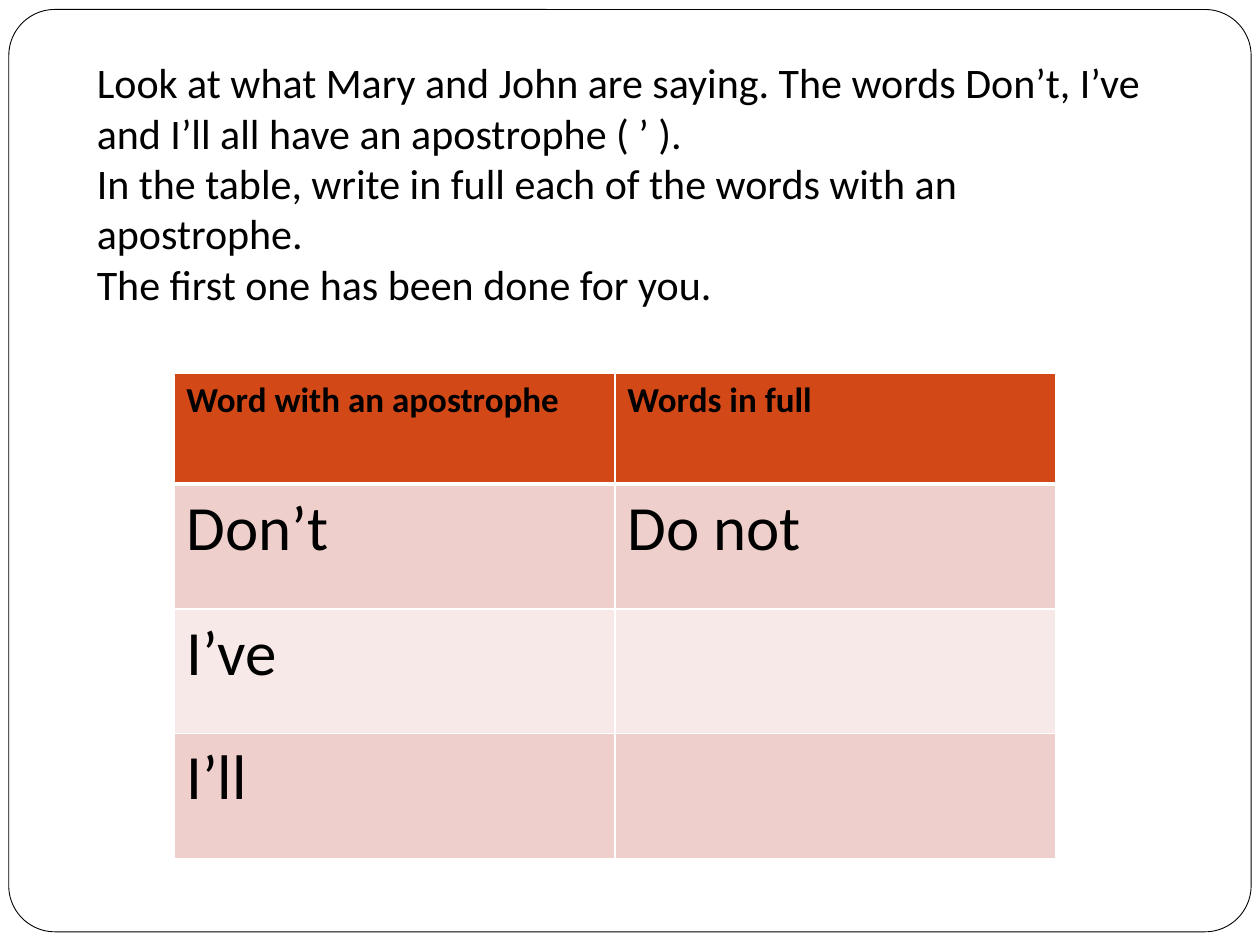
from dataclasses import dataclass
from typing import NamedTuple

from lxml.etree import SubElement
from pptx import Presentation
from pptx.dml.color import RGBColor
from pptx.enum.shapes import MSO_SHAPE as Shape
from pptx.enum.text import MSO_ANCHOR as Anchor
from pptx.oxml.ns import qn
from pptx.util import Inches, Pt


@dataclass(frozen=True)
class Theme:
    font: str = "Calibri"
    ink: str = "000000"
    paper: str = "FFFFFF"
    header: str = "D34817"
    bands: tuple[str, str] = ("EFCFCC", "F7E9E8")
    instruction_size: int = 24
    header_size: int = 20
    word_size: int = 36
    rule: int = 1
    header_rule: int = 3


class Box(NamedTuple):
    """Place and size as shares of the slide."""
    left: float
    top: float
    width: float
    height: float

    def lengths(self) -> tuple[int, ...]:
        return tuple(int(share * side) for share, side in zip(self, (WIDTH, HEIGHT) * 2))


class Row(NamedTuple):
    words: tuple[str, str]
    height: float
    fill: str
    size: int
    bold: bool = False
    top_rule: int = 1
    bottom_rule: int = 1


THEME = Theme()
WIDTH, HEIGHT = Inches(10), Inches(7.5)
FRAME = Box(0.007, 0.01, 0.986, 0.976)
INSTRUCTIONS = Box(0.067, 0.048, 0.85, 0.292)
TABLE = Box(0.138, 0.395, 0.70, 0.513)
HEADER_HEIGHT, WORD_HEIGHT = 0.88, 0.99

INSTRUCTION_LINES = (
    "Look at what Mary and John are saying. The words Don’t, I’ve and I’ll all have an apostrophe ( ’ ).",
    "In the table, write in full each of the words with an apostrophe.",
    "The first one has been done for you.",
)
HEADINGS = ("Word with an apostrophe", "Words in full")
CONTRACTIONS = (("Don’t", "Do not"), ("I’ve", ""), ("I’ll", ""))


def color(value: str) -> RGBColor:
    return RGBColor.from_string(value)


def add_run(paragraph, text: str, size: int, bold: bool = False) -> None:
    run = paragraph.add_run()
    run.text = text
    run.font.name = THEME.font
    run.font.size = Pt(size)
    run.font.bold = bold
    run.font.color.rgb = color(THEME.ink)


def draw_frame(slide) -> None:
    frame = slide.shapes.add_shape(Shape.ROUNDED_RECTANGLE, *FRAME.lengths())
    frame.adjustments[0] = 0.05
    frame.shadow.inherit = False
    frame.fill.solid()
    frame.fill.fore_color.rgb = color(THEME.paper)
    frame.line.color.rgb = color(THEME.ink)
    frame.line.width = Pt(0.5)


def draw_instructions(slide) -> None:
    body = slide.shapes.add_textbox(*INSTRUCTIONS.lengths()).text_frame
    body.word_wrap = True
    body.vertical_anchor = Anchor.BOTTOM
    body.margin_bottom = Inches(0.1)
    paragraph = body.paragraphs[0]
    for index, line in enumerate(INSTRUCTION_LINES):
        if index:
            paragraph.add_line_break()
        add_run(paragraph, line, THEME.instruction_size)


def draw_borders(cell, row: Row) -> None:
    properties = cell._tc.get_or_add_tcPr()
    widths = {"lnL": THEME.rule, "lnR": THEME.rule, "lnT": row.top_rule, "lnB": row.bottom_rule}
    for position, (side, width) in enumerate(widths.items()):
        border = SubElement(properties, qn(f"a:{side}"), w=str(Pt(width)))
        SubElement(SubElement(border, qn("a:solidFill")), qn("a:srgbClr"), val=THEME.paper)
        properties.insert(position, border)


def draw_table(slide, rows: list[Row]) -> None:
    columns = len(HEADINGS)
    table = slide.shapes.add_table(len(rows), columns, *TABLE.lengths()).table
    for line, row in zip(table.rows, rows):
        line.height = Inches(row.height)
        for cell, words in zip(line.cells, row.words):
            cell.fill.solid()
            cell.fill.fore_color.rgb = color(row.fill)
            draw_borders(cell, row)
            paragraph = cell.text_frame.paragraphs[0]
            paragraph.font.size = Pt(row.size)
            if words:
                add_run(paragraph, words, row.size, row.bold)


def main() -> None:
    deck = Presentation()
    deck.slide_width, deck.slide_height = WIDTH, HEIGHT
    slide = deck.slides.add_slide(deck.slide_layouts[6])

    # Rounded page border and task
    draw_frame(slide)
    draw_instructions(slide)

    # Header row, then banded word rows
    rows = [Row(HEADINGS, HEADER_HEIGHT, THEME.header, THEME.header_size, True,
                bottom_rule=THEME.header_rule)]
    for index, words in enumerate(CONTRACTIONS):
        rows.append(Row(words, WORD_HEIGHT, THEME.bands[index % 2], THEME.word_size,
                        top_rule=THEME.rule if index else THEME.header_rule))
    draw_table(slide, rows)
    deck.save("out.pptx")


if __name__ == "__main__":
    main()
